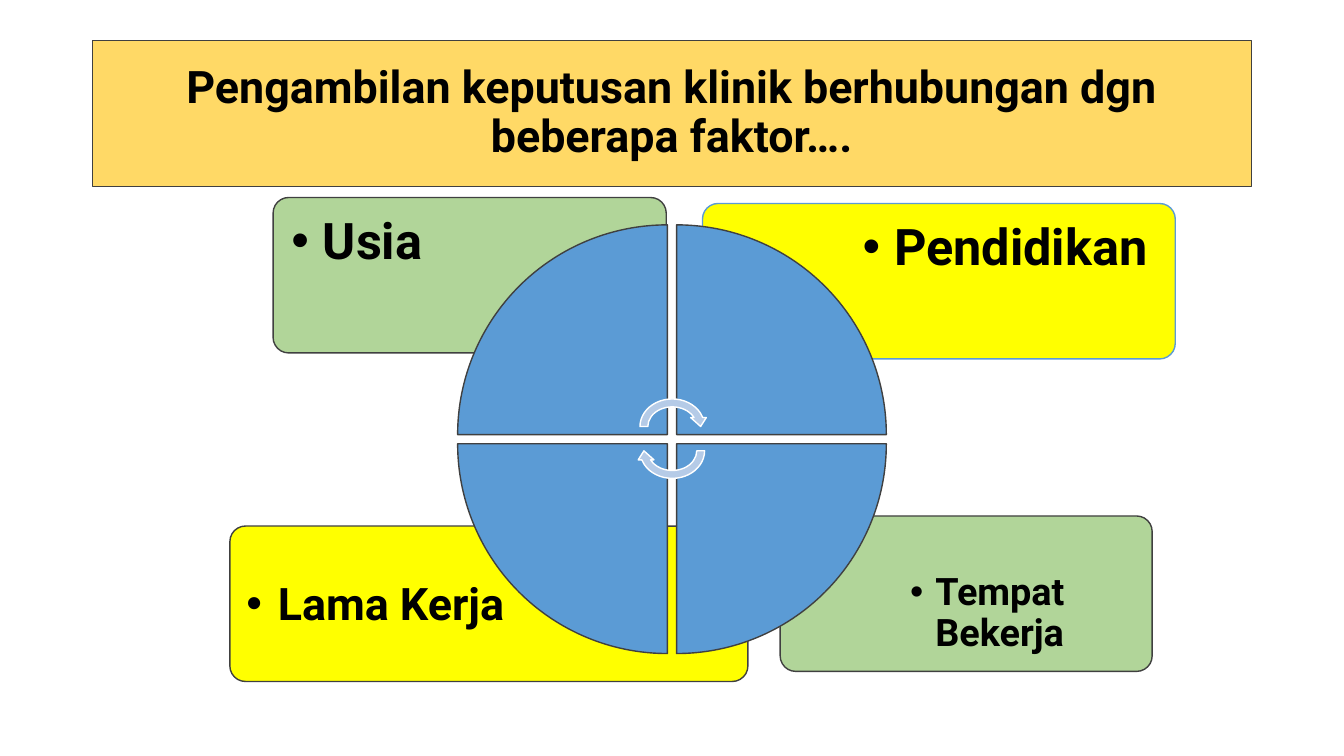
from lxml import etree
from pptx import Presentation
from pptx.dml.color import RGBColor
from pptx.enum.shapes import MSO_SHAPE
from pptx.enum.text import MSO_ANCHOR, PP_ALIGN
from pptx.oxml.ns import qn
from pptx.util import Pt

RECT = MSO_SHAPE.RECTANGLE
ROUNDED = MSO_SHAPE.ROUNDED_RECTANGLE
WEDGE = MSO_SHAPE.PIE_WEDGE
CIRCULAR_ARROW = MSO_SHAPE.CIRCULAR_ARROW
MIDDLE, TOP = MSO_ANCHOR.MIDDLE, MSO_ANCHOR.TOP
CENTER, LEFT = PP_ALIGN.CENTER, PP_ALIGN.LEFT

BLACK = RGBColor(0x00, 0x00, 0x00)
WHITE = RGBColor(0xFF, 0xFF, 0xFF)
GOLD = RGBColor(0xFF, 0xD9, 0x66)
GREEN = RGBColor(0xA9, 0xD1, 0x8E)
YELLOW = RGBColor(0xFF, 0xFF, 0x00)
BLUE = RGBColor(0x5B, 0x9B, 0xD5)
PALE_BLUE = RGBColor(0xB5, 0xCB, 0xE7)
GREY = RGBColor(0x40, 0x40, 0x40)

prs = Presentation()
prs.slide_width, prs.slide_height = Pt(960), Pt(540)
s = prs.slides.add_slide(prs.slide_layouts[6])


def add_shape(kind, x, y, w, h, fill, line, line_width=1, rotation=0):
    sp = s.shapes.add_shape(kind, Pt(x), Pt(y), Pt(w), Pt(h))
    sp.shadow.inherit = False
    sp.fill.solid()
    sp.fill.fore_color.rgb = fill
    sp.line.color.rgb = line
    sp.line.width = Pt(line_width)
    sp.rotation = rotation
    return sp


def set_text(sp, text, size, align, anchor):
    tf = sp.text_frame
    tf.word_wrap = True
    tf.vertical_anchor = anchor
    p = tf.paragraphs[0]
    p.text = text
    p.alignment = align
    p.line_spacing = 0.9
    r = p.runs[0]
    r.font.name = "Roboto"
    r.font.size = Pt(size)
    r.font.bold = True
    r.font.color.rgb = BLACK
    return tf


title = add_shape(RECT, 66, 28.8, 828, 104.4, GOLD, GREY, 0.75)
set_text(title, "Pengambilan keputusan klinik berhubungan dgn beberapa faktor….",
         32, CENTER, MIDDLE)

PANEL_H = 111
PAD = 2.3
factors = [
    ("Tempat Bekerja", 557.3, 368.6, 265.7, GREEN, GREY, 27, 18, 10.8, True, True),
    ("Lama Kerja", 164.2, 375.8, 370, YELLOW, GREY, 32, 22.5, 9.4, False, True),
    ("Pendidikan", 501.8, 145.4, 337.7, YELLOW, BLUE, 36, 22.5, 10.8, True, False),
    ("Usia", 195.1, 141.1, 280.8, GREEN, GREY, 36, 22.5, 10.8, False, False),
]
for text, x, y, w, fill, line, size, indent, inset, on_right, at_bottom in factors:
    panel = add_shape(ROUNDED, x, y, w, PANEL_H, fill, line)
    panel.adjustments[0] = 0.1
    if fill == GREEN:
        color = panel.fill._xPr.find(qn("a:solidFill"))[0]
        etree.SubElement(color, qn("a:alpha"), val="90000")

    text_x = x + PAD + (0.3 * w if on_right else 0)
    text_y = y + PAD + (0.25 * PANEL_H if at_bottom else 0)
    label = s.shapes.add_textbox(Pt(text_x), Pt(text_y), Pt(0.7 * w - 2 * PAD),
                                 Pt(0.75 * PANEL_H - 2 * PAD))
    tf = set_text(label, text, size, LEFT, TOP)
    tf.margin_left = tf.margin_right = tf.margin_top = tf.margin_bottom = Pt(inset)
    pPr = tf.paragraphs[0]._p.get_or_add_pPr()
    pPr.set("marL", str(Pt(indent)))
    pPr.set("indent", str(-Pt(indent)))
    etree.SubElement(pPr, qn("a:buFont"), typeface="Arial")
    etree.SubElement(pPr, qn("a:buChar"), char="•")

WHEEL_X, WHEEL_Y, WEDGE_SIZE, WEDGE_STEP = 326.9, 160.6, 149.8, 156.4
for i, (col, row) in enumerate([(0, 0), (1, 0), (1, 1), (0, 1)]):
    add_shape(WEDGE, WHEEL_X + col * WEDGE_STEP, WHEEL_Y + row * WEDGE_STEP,
              WEDGE_SIZE, WEDGE_SIZE, BLUE, GREY, rotation=90 * i)

for y, rotation in [(282.2, 0), (299.5, 180)]:
    add_shape(CIRCULAR_ARROW, 454.3, y, 51.8, 45, PALE_BLUE, WHITE, rotation=rotation)

prs.save("out.pptx")
